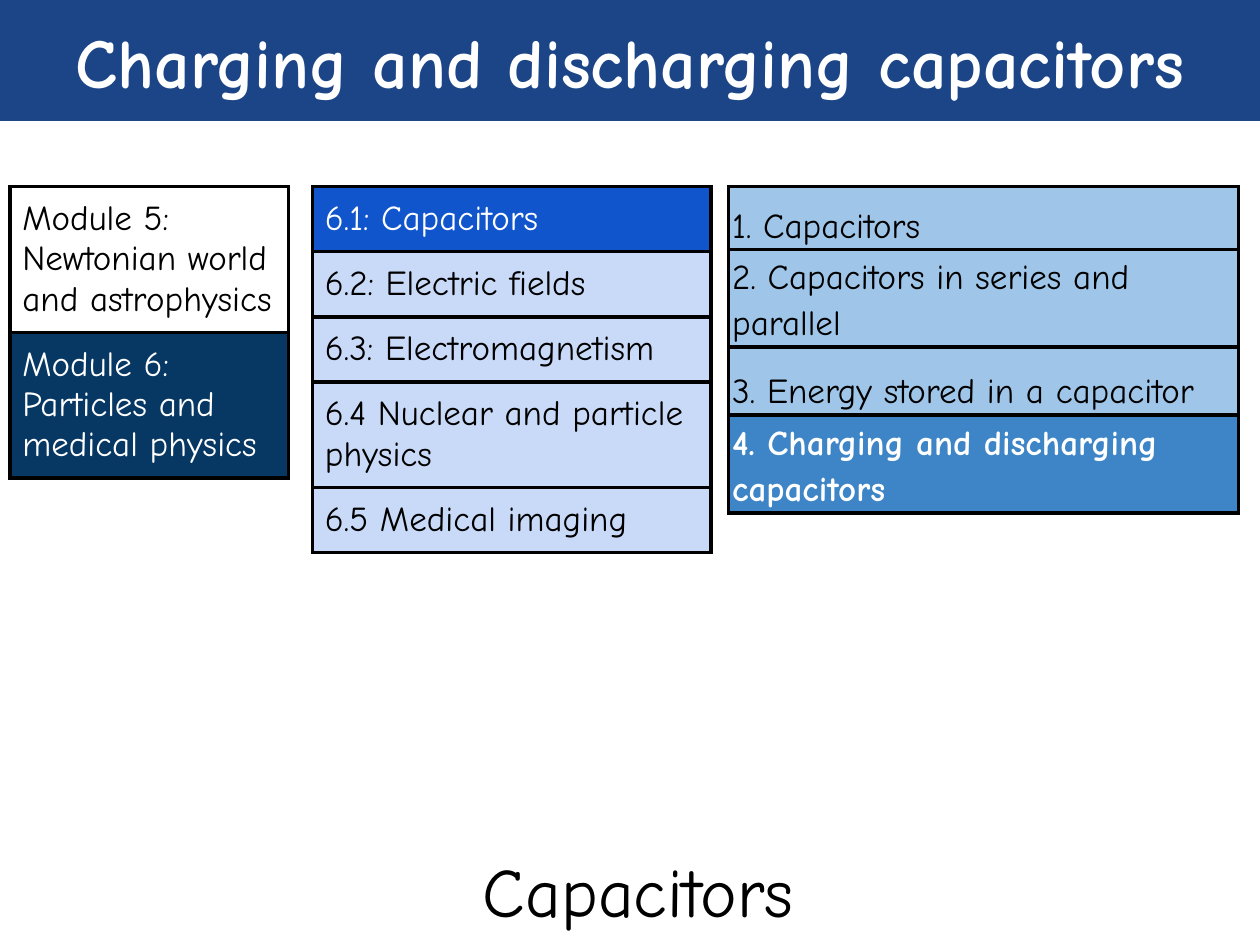
from lxml import etree
from pptx import Presentation
from pptx.dml.color import RGBColor
from pptx.enum.shapes import MSO_SHAPE
from pptx.enum.text import MSO_ANCHOR, PP_ALIGN
from pptx.oxml.ns import qn
from pptx.util import Cm, Pt

RECTANGLE = MSO_SHAPE.RECTANGLE
TOP, MIDDLE, BOTTOM = MSO_ANCHOR.TOP, MSO_ANCHOR.MIDDLE, MSO_ANCHOR.BOTTOM
CENTER = PP_ALIGN.CENTER

FONT = "Comic Neue"
COLORS = {
    "white": "FFFFFF",
    "black": "000000",
    "banner": "1C4587",
    "module": "073763",
    "topic": "1155CC",
    "other topic": "C9DAF8",
    "lesson": "3D85C6",
    "other lesson": "9FC5E8",
}


def style(paragraph, size, color, bold=False):
    for run in paragraph.runs:
        run.font.name = FONT
        run.font.size = Pt(size)
        run.font.bold = bold
        run.font.color.rgb = RGBColor.from_string(COLORS[color])


def add_border(cell):
    properties = cell._tc.get_or_add_tcPr()
    for position, side in enumerate(("lnL", "lnR", "lnT", "lnB")):
        line = etree.Element(qn(f"a:{side}"), w=str(Pt(2.25)))
        fill = etree.SubElement(line, qn("a:solidFill"))
        etree.SubElement(fill, qn("a:srgbClr"), val=COLORS["black"])
        properties.insert(position, line)


prs = Presentation()
prs.slide_width = Cm(25.4)
prs.slide_height = Cm(19.05)
slide = prs.slides.add_slide(prs.slide_layouts[6])

columns = [
    {
        "left": 0.2, "width": 5.61, "margins": (0.25, 0.25),
        "anchor": TOP, "spacing": None,
        "rows": [
            ("Module 5: Newtonian world and astrophysics", 1.07, "white", "black", False),
            ("Module 6: Particles and medical physics", 1.07, "module", "white", False),
        ],
    },
    {
        "left": 6.3, "width": 8.03, "margins": (0.25, 0.25),
        "anchor": TOP, "spacing": None,
        "rows": [
            ("6.1: Capacitors", 1.24, "topic", "white", False),
            ("6.2: Electric fields", 1.07, "other topic", "black", False),
            ("6.3: Electromagnetism", 1.07, "other topic", "black", False),
            ("6.4 Nuclear and particle physics", 1.07, "other topic", "black", False),
            ("6.5 Medical imaging", 1.07, "other topic", "black", False),
        ],
    },
    {
        "left": 14.68, "width": 10.29, "margins": (0.08, 0.05),
        "anchor": BOTTOM, "spacing": 1.15,
        "rows": [
            ("1. Capacitors", 1.27, "other lesson", "black", False),
            ("2. Capacitors in series and parallel", 1.07, "other lesson", "black", False),
            ("3. Energy stored in a capacitor", 1.37, "other lesson", "black", False),
            ("4. Charging and discharging capacitors", 1.07, "lesson", "white", True),
        ],
    },
]

for column in columns:
    entries = column["rows"]
    height = sum(entry[1] for entry in entries)
    outline = slide.shapes.add_table(
        len(entries), 1, Cm(column["left"]), Cm(3.76), Cm(column["width"]), Cm(height)
    ).table
    outline.first_row = False
    outline.horz_banding = False
    side_margin, end_margin = column["margins"]
    for row, (wording, row_height, fill, color, bold) in zip(outline.rows, entries):
        row.height = Cm(row_height)
        cell = row.cells[0]
        cell.margin_left = cell.margin_right = Cm(side_margin)
        cell.margin_top = cell.margin_bottom = Cm(end_margin)
        cell.vertical_anchor = column["anchor"]
        cell.fill.solid()
        cell.fill.fore_color.rgb = RGBColor.from_string(COLORS[fill])
        add_border(cell)
        cell.text_frame.text = wording
        paragraph = cell.text_frame.paragraphs[0]
        paragraph.line_spacing = column["spacing"]
        style(paragraph, 20, color, bold)

headings = [
    ("Capacitors", (5.77, 17.15, 14.2, 1.57), "white", 59, 0.13, 39.6, "black", False),
    ("Charging and discharging capacitors", (0, 0, 25.4, 2.44), "banner", 100, 0.25, 40, "white", True),
]

for wording, place, fill, opacity, end_margin, size, color, bold in headings:
    heading = slide.shapes.add_shape(RECTANGLE, *map(Cm, place))
    heading.shadow.inherit = False
    heading.line.fill.background()
    heading.fill.solid()
    heading.fill.fore_color.rgb = RGBColor.from_string(COLORS[fill])
    if opacity < 100:
        fill_color = heading._element.spPr.find(qn("a:solidFill"))[0]
        etree.SubElement(fill_color, qn("a:alpha"), val=str(opacity * 1000))
    frame = heading.text_frame
    frame.word_wrap = True
    frame.vertical_anchor = MIDDLE
    frame.margin_left = frame.margin_right = Cm(0.25)
    frame.margin_top = frame.margin_bottom = Cm(end_margin)
    frame.text = wording
    frame.paragraphs[0].alignment = CENTER
    style(frame.paragraphs[0], size, color, bold)

prs.save("out.pptx")
